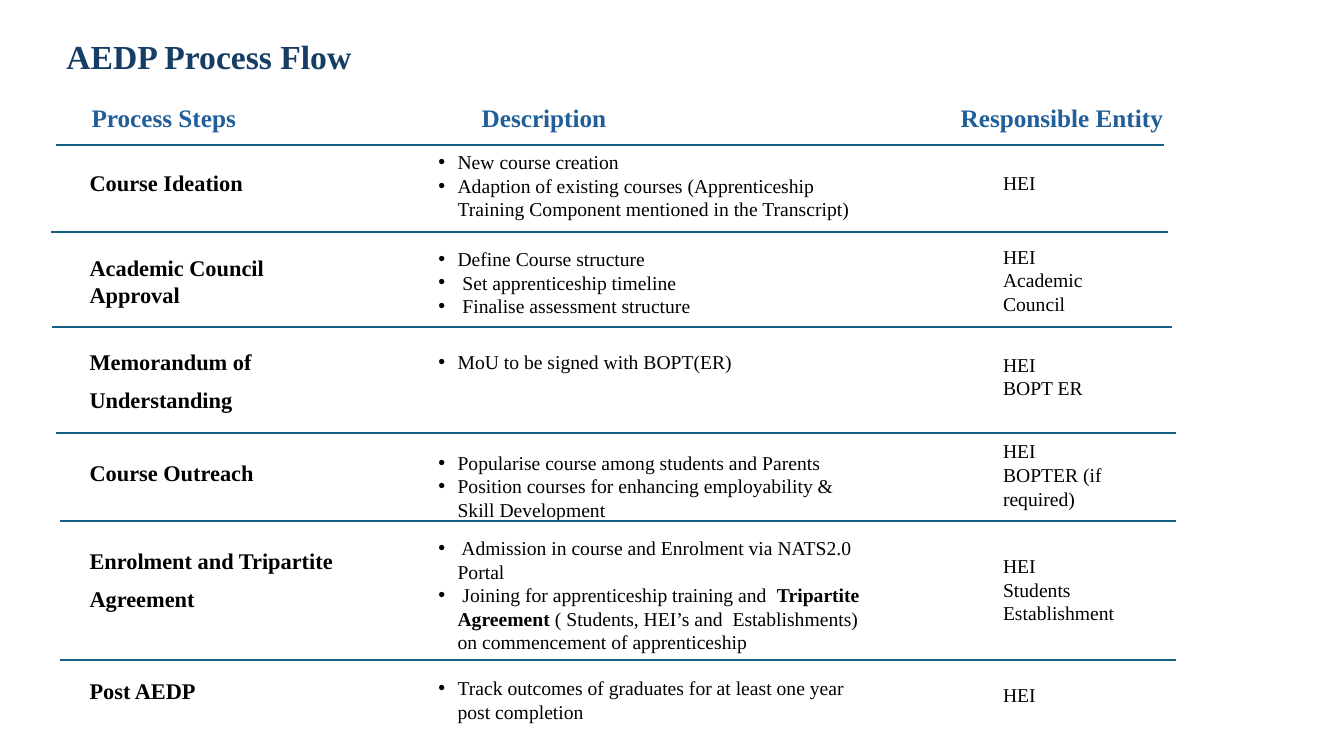
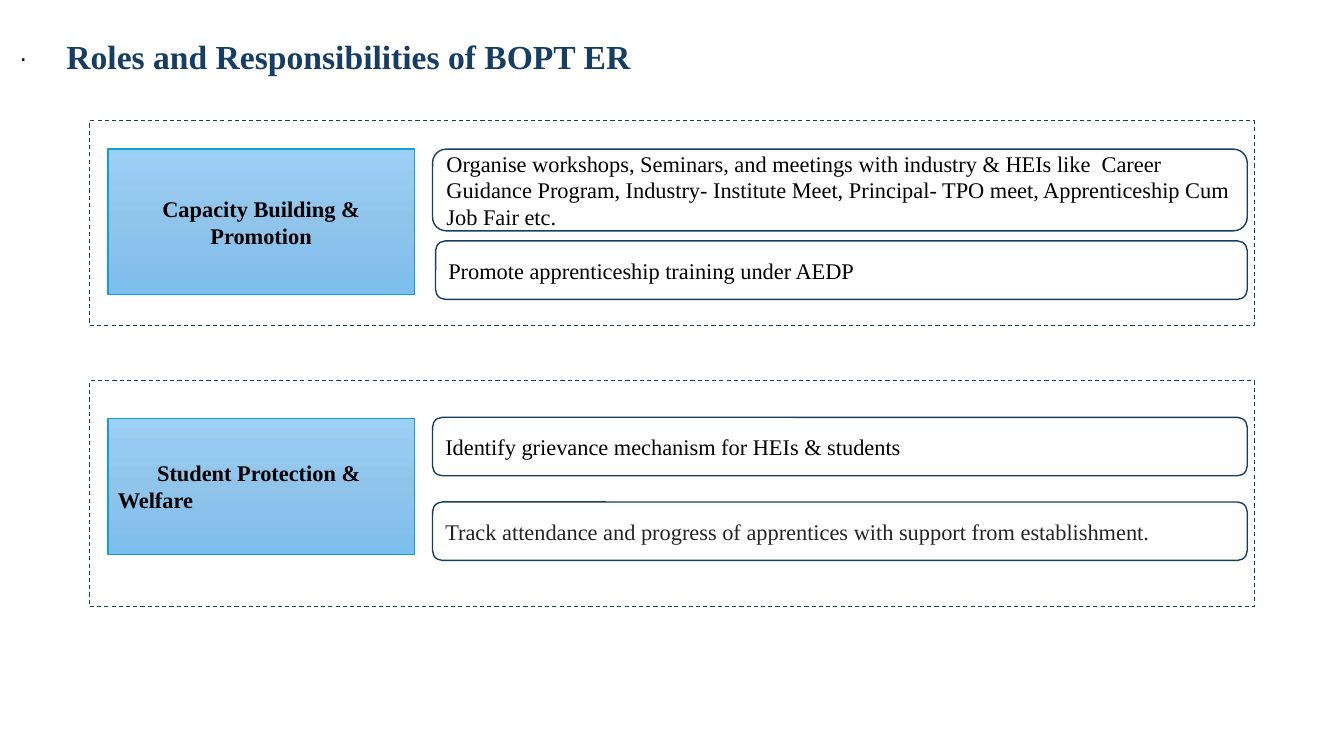
from copy import deepcopy

from lxml import etree
from pptx import Presentation
from pptx import util as u
from pptx.dml.color import RGBColor
from pptx.enum import dml, shapes, text
from pptx.oxml.ns import qn

PX = 9144  # 100 px to the inch
SERIF = "Times New Roman"
NAVY = RGBColor(0x16, 0x3E, 0x64)
BLUE = RGBColor(0x21, 0x5F, 0x9A)
TEAL = RGBColor(0x15, 0x60, 0x82)
CYAN = RGBColor(0x0F, 0x9E, 0xD5)
BLACK = RGBColor(0, 0, 0)
CHARCOAL = RGBColor(0x24, 0x24, 0x24)
SKY_STOPS = [
    (0, RGBColor(0x9E, 0xCF, 0xF5)),
    (0.5, RGBColor(0x90, 0xC4, 0xEB)),
    (1, RGBColor(0x7C, 0xBE, 0xED)),
]

HEADINGS = [("Process Steps", 81, 300), ("Description", 468, 300),
            ("Responsible Entity", 943, 250)]
STEP_X, STEP_W = 79, 267
DESC_X, DESC_W = 425, 444
ENTITY_X, ENTITY_W = 985, 140
LOOSE = 27  # line pitch in points of the widely set steps

# Each cell: top, height, paragraphs; a step also has its line pitch
PROCESS = [
    ((163, 37, ["Course Ideation"], None),
     (144, 81, ["New course creation",
                "Adaption of existing courses (Apprenticeship Training "
                "Component mentioned in the Transcript)"]),
     (165, 34, ["HEI"])),
    ((247, 64, ["Academic Council", "Approval"], None),
     (240, 81, ["Define Course structure", " Set apprenticeship timeline",
                " Finalise assessment structure"]),
     (238, 81, ["HEI", "Academic Council"])),
    ((330, 90, ["Memorandum of Understanding"], LOOSE),
     (342, 34, ["MoU to be signed with BOPT(ER)"]),
     (345, 57, ["HEI", "BOPT ER"])),
    ((451, 37, ["Course Outreach"], None),
     (442, 81, ["Popularise course among students and Parents",
                "Position courses for enhancing employability & Skill Development"]),
     (431, 81, ["HEI", "BOPTER (if required)"])),
    ((527, 90, ["Enrolment and Tripartite Agreement"], LOOSE),
     (527, 128, [" Admission in course and Enrolment via NATS2.0 Portal",
                 " Joining for apprenticeship training and  *Tripartite Agreement*"
                 " ( Students, HEI’s and  Establishments) on commencement of "
                 "apprenticeship"]),
     (545, 81, ["HEI", "Students", "Establishment"])),
    ((667, 37, ["Post AEDP"], None),
     (666, 57, ["Track outcomes of graduates for at least one year post completion"]),
     (673, 34, ["HEI"])),
]
# Left, right, y
RULES = [(56, 1154, 144), (51, 1158, 230), (52, 1162, 324),
         (56, 1166, 430), (60, 1166, 517), (60, 1166, 655)]


def px(*values):
    return [u.Emu(v * PX) for v in values]


def style(run, size, color, bold=False, font=SERIF):
    f = run.font
    f.name, f.size, f.bold = font, u.Pt(size), bold
    f.color.rgb = color


def add_bullet(p):
    pPr = p._p.get_or_add_pPr()
    pPr.set("marL", str(19 * PX))
    pPr.set("indent", str(-19 * PX))
    etree.SubElement(pPr, qn("a:buFont")).set("typeface", "Arial")
    etree.SubElement(pPr, qn("a:buChar")).set("char", "•")


def add_text(s, box, lines, size, color=BLACK, bold=False, font=SERIF,
             bullets=False, pitch=None, wrap=True):
    """Add a text box; words between asterisks are bold."""
    tf = s.shapes.add_textbox(*px(*box)).text_frame
    tf.word_wrap = wrap
    for i, line in enumerate(lines):
        p = tf.add_paragraph() if i else tf.paragraphs[0]
        if pitch:
            p.line_spacing = u.Pt(pitch)
        if bullets:
            add_bullet(p)
        for j, part in enumerate(line.split("*")):
            r = p.add_run()
            r.text = part
            style(r, size, color, bold or j % 2 == 1, font)


def add_rule(s, left, right, y):
    line = s.shapes.add_connector(shapes.MSO_CONNECTOR.STRAIGHT,
                                  *px(left, y, right, y))
    line.line.color.rgb = TEAL
    line.line.width = u.Pt(1.5)
    etree.SubElement(line._element.spPr, qn("a:effectLst"))


def add_box(s, kind, box, line, width=1):
    sp = s.shapes.add_shape(kind, *px(*box))
    sp.shadow.inherit = False
    sp.fill.background()
    sp.line.color.rgb = line
    sp.line.width = u.Pt(width)
    return sp


def set_label(sp, label, align, color=BLACK, bold=False):
    tf = sp.text_frame
    tf.word_wrap = True
    tf.vertical_anchor = text.MSO_ANCHOR.MIDDLE
    p = tf.paragraphs[0]
    p.text = label
    p.alignment = align
    style(p.runs[0], 16, color, bold)
    return p


def add_frame(s, box):
    sp = add_box(s, shapes.MSO_SHAPE.RECTANGLE, box, NAVY, 0.75)
    sp.line.dash_style = dml.MSO_LINE.DASH


def add_topic(s, box, label, align):
    sp = add_box(s, shapes.MSO_SHAPE.RECTANGLE, box, CYAN)
    sp.fill.gradient()
    sp.fill.gradient_angle = 270
    gs_list = sp._element.spPr.find(".//" + qn("a:gsLst"))
    gs_list.insert(1, deepcopy(gs_list[0]))
    for stop, (position, color) in zip(sp.fill.gradient_stops, SKY_STOPS):
        stop.position = position
        stop.color.rgb = color
    return set_label(sp, label, align, bold=True)


def add_duty(s, box, label, color=BLACK):
    sp = add_box(s, shapes.MSO_SHAPE.ROUNDED_RECTANGLE, box, NAVY)
    set_label(sp, label, text.PP_ALIGN.LEFT, color)


def add_slide(prs, title):
    s = prs.slides.add_slide(prs.slide_layouts[6])
    add_text(s, (56, 31, 858, 50), [title], 24, NAVY, bold=True)
    return s


def build_process(prs):
    s = add_slide(prs, "AEDP Process Flow")
    for heading, x, w in HEADINGS:
        add_text(s, (x, 97, w, 40), [heading], 18, BLUE, bold=True)
    for (step_y, step_h, step, pitch), (desc_y, desc_h, desc), \
            (entity_y, entity_h, entity) in PROCESS:
        add_text(s, (STEP_X, step_y, STEP_W, step_h), step, 16,
                 bold=True, pitch=pitch)
        add_text(s, (DESC_X, desc_y, DESC_W, desc_h), desc, 14, bullets=True)
        add_text(s, (ENTITY_X, entity_y, ENTITY_W, entity_h), entity, 14)
    for rule in RULES:
        add_rule(s, *rule)


def build_roles(prs):
    s = add_slide(prs, "Roles and Responsibilities of BOPT ER")
    add_text(s, (10, 31, 27, 40), ["."], 18, font="Arial", wrap=False)

    add_frame(s, (89, 120, 1155, 203))
    add_topic(s, (107, 148, 304, 144), "Capacity Building & Promotion",
              text.PP_ALIGN.CENTER)
    add_duty(s, (429, 148, 808, 81),
             "Organise workshops, Seminars, and meetings with industry & HEIs "
             "like  Career Guidance Program, Industry- Institute Meet, "
             "Principal- TPO meet, Apprenticeship Cum Job Fair etc.")
    add_duty(s, (432, 239, 805, 58), "Promote apprenticeship training under AEDP")

    add_frame(s, (89, 378, 1155, 224))
    p = add_topic(s, (107, 415, 304, 135), "Student Protection & Welfare",
                  text.PP_ALIGN.LEFT)
    p._p.get_or_add_pPr().set("indent", str(39 * PX))
    add_duty(s, (429, 414, 808, 58),
             "Identify grievance mechanism for HEIs & students")
    add_duty(s, (429, 498, 808, 58),
             "Track attendance and progress of apprentices with support from "
             "establishment.", CHARCOAL)


def main():
    prs = Presentation()
    prs.slide_width, prs.slide_height = px(1333, 750)
    build_process(prs)
    build_roles(prs)
    prs.save("out.pptx")


if __name__ == "__main__":
    main()
